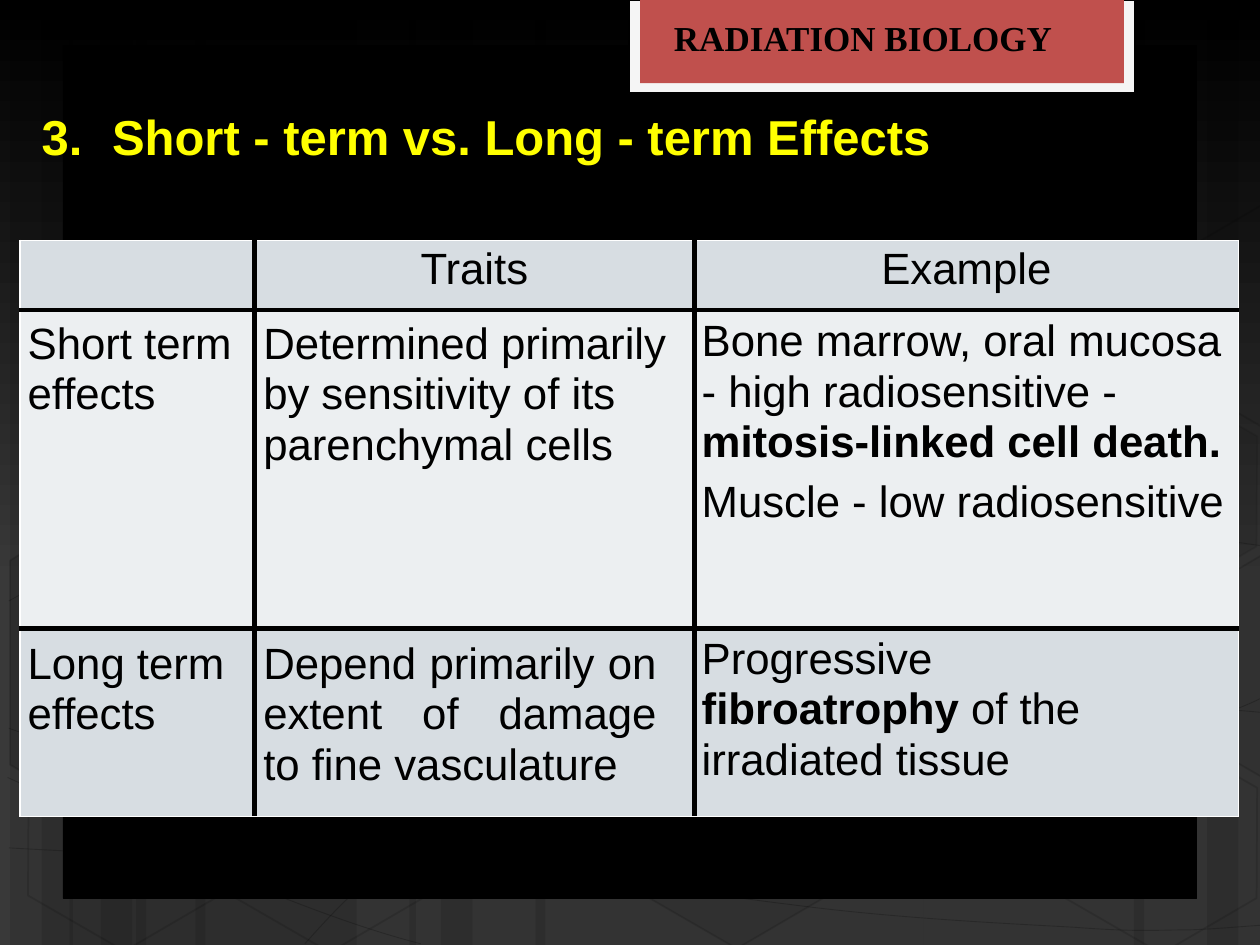
from lxml.etree import SubElement
from pptx import Presentation
from pptx.dml.color import RGBColor
from pptx.enum.shapes import MSO_SHAPE as Preset
from pptx.enum.text import MSO_ANCHOR as Anchor, MSO_AUTO_SIZE as AutoSize, PP_ALIGN as Align
from pptx.oxml.ns import qn
from pptx.util import Emu, Pt

SCALE = 9144  # 100 px to the inch
COLORS = {
    "black": "000000", "gray": "393939", "white": "FFFFFF", "frame": "F5F5F5",
    "red": "C0504D", "yellow": "FFFF00", "dark_row": "D7DDE2", "light_row": "ECEFF1",
}

STRIPES = [  # left, width
    (108, 175), (8, 50), (33, 83), (155, 175), (55, 50), (80, 83),
    (733, 175), (958, 42), (900, 83), (425, 308), (325, 50), (350, 83),
]
HEXAGONS = [  # left, top, fill opacity, line opacity
    (497, 589, 6, 12), (11, 591, 0, 12), (14, 312, 7, 8),
    (174, 592, 0, 12), (834, 593, 0, 12), (834, 314, 7, 8),
]
CUT_HEXAGONS = [  # points, fill opacity
    ([(8, 445), (19, 438), (96, 482), (95, 570), (20, 614), (8, 607)], 10),
    ([(926, 485), (1001, 441), (1009, 446), (1009, 613), (1002, 617), (926, 573)], 4),
    ([(926, 207), (1001, 163), (1010, 168), (1009, 335), (1002, 339), (926, 295)], 0),
]
CURVES = [  # start point, then two controls and an end for each Bézier piece
    [(7, 673), (61, 676), (115, 679), (190, 678), (265, 677), (358, 675), (458, 665),
     (558, 655), (700, 636), (792, 617), (883, 598), (977, 568), (1007, 551)],
    [(7, 477), (36, 461), (65, 446), (121, 431), (178, 416), (259, 394), (347, 387),
     (436, 380), (544, 379), (654, 387), (764, 395), (947, 426), (1007, 434)],
    [(6, 617), (127, 672), (247, 727), (334, 749)],
    [(7, 578), (38, 589), (70, 600), (128, 616), (186, 631), (273, 656), (357, 673),
     (440, 690), (545, 708), (628, 718), (711, 729), (800, 733), (853, 736),
     (905, 740), (919, 738), (945, 738), (971, 737), (989, 735), (1007, 734)],
    [(242, 749), (260, 729), (278, 709), (302, 691), (326, 673), (360, 653), (388, 639),
     (416, 625), (433, 619), (470, 609), (506, 599), (573, 585), (608, 578),
     (644, 571), (649, 571), (680, 569), (711, 566), (760, 563), (794, 562),
     (829, 561), (886, 562), (886, 562), (908, 562), (931, 562), (953, 562),
     (971, 563), (988, 564), (1006, 566)],
]

# Each cell holds paragraphs; the parts of a paragraph alternate plain and bold.
HEADER = [[], [("Traits",)], [("Example",)]]
SHORT_TERM = [
    [("Short term effects",)],
    [("Determined primarily by sensitivity of its parenchymal cells",)],
    [("Bone marrow, oral mucosa",), ("- high radiosensitive -",),
     ("", "mitosis-linked cell death."), ("Muscle - low radiosensitive",)],
]
LONG_TERM = [
    [("Long term effects",)],
    [("Depend primarily on extent of damage\vto fine vasculature",)],
    [("Progressive ", "fibroatrophy", " of the irradiated tissue")],
]
ROWS = [  # height, fill, top margin of each cell, cells
    (55, "dark_row", (2, 2, 2), HEADER),
    (253, "light_row", (6, 6, 4), SHORT_TERM),
    (149, "dark_row", (7, 7, 3), LONG_TERM),
]
COLUMNS = [186, 349, 432]


def px(value):
    return Emu(round(value * SCALE))


def rgb(name):
    return RGBColor.from_string(COLORS[name])


def set_opacity(properties, percent):
    color = next(properties.iter(qn("a:srgbClr")))
    SubElement(color, qn("a:alpha")).set("val", str(percent * 1000))


def paint(shape, fill=None, opacity=100, line_width=0, line_opacity=100):
    """Fill the shape and give it a black outline; zero means none."""
    shape.shadow.inherit = False
    if fill and opacity:
        shape.fill.solid()
        shape.fill.fore_color.rgb = rgb(fill)
        set_opacity(shape.element.spPr.find(qn("a:solidFill")), opacity)
    else:
        shape.fill.background()
    if line_width:
        shape.line.width = Pt(line_width)
        shape.line.color.rgb = rgb("black")
        set_opacity(shape.element.spPr.find(qn("a:ln")), line_opacity)
    else:
        shape.line.fill.background()


def add_preset(slide, preset, left, top, width, height):
    return slide.shapes.add_shape(preset, px(left), px(top), px(width), px(height))


def add_outline(slide, points, close):
    builder = slide.shapes.build_freeform(*points[0], scale=SCALE)
    builder.add_line_segments(points[1:], close=close)
    return builder.convert_to_shape()


def add_curve(slide, points):
    """Join the ends of the pieces, then bend each segment by its two controls."""
    ends = points[::3]
    curve = add_outline(slide, ends, False)
    left, top = (min(axis) for axis in zip(*ends))
    segments = list(curve.element.iter(qn("a:lnTo")))
    for segment, first, second in zip(segments, points[1::3], points[2::3]):
        segment.tag = qn("a:cubicBezTo")
        for x, y in (second, first):
            control = SubElement(segment, qn("a:pt"), x=str(x - left), y=str(y - top))
            segment.insert(0, control)
    return curve


def add_backdrop(slide):
    fill = slide.background.fill
    fill.gradient()
    fill.gradient_angle = 270
    for stop, (color, position) in zip(fill.gradient_stops, [("black", 0), ("gray", 0.62)]):
        stop.color.rgb = rgb(color)
        stop.position = position
    for left, width in STRIPES:
        paint(add_preset(slide, Preset.RECTANGLE, left, 0, width, 750), "black", 10)
    for points in CURVES:
        paint(add_curve(slide, points), line_width=0.5, line_opacity=20)
    for left, top, opacity, line_opacity in HEXAGONS:
        hexagon = add_preset(slide, Preset.HEXAGON, left, top, 175, 152)
        hexagon.adjustments[0] = 0.285
        hexagon.rotation = 30
        paint(hexagon, "black", opacity, 1, line_opacity)
    for points, opacity in CUT_HEXAGONS:
        paint(add_outline(slide, points, True), "black", opacity, 1, 12)
    paint(add_preset(slide, Preset.RECTANGLE, 50, 36, 900, 677), "black", line_width=0.5)


def format_run(run, font_name, size, color, bold):
    run.font.name, run.font.size, run.font.bold = font_name, Pt(size), bold
    run.font.color.rgb = rgb(color)


def add_banner(slide, left, top, width, height):
    paint(add_preset(slide, Preset.RECTANGLE, left, top, width, height), "frame", line_width=1.25)
    paint(add_preset(slide, Preset.RECTANGLE, left + 9, top, width - 18, height - 8), "red")
    label = slide.shapes.add_textbox(px(left + 26), px(top + 8), px(358), px(44))
    label.text_frame.word_wrap = True
    label.text_frame.text = "RADIATION BIOLOGY"
    format_run(label.text_frame.paragraphs[0].runs[0], "Times New Roman", 20, "black", True)


def add_title(slide, left, top, width, height):
    title = slide.shapes.title
    slide.shapes.element.append(title.element)  # in front of the backdrop
    title.left, title.top, title.width, title.height = map(px, (left, top, width, height))
    frame = title.text_frame
    frame.auto_size, frame.vertical_anchor = AutoSize.NONE, Anchor.BOTTOM
    frame.margin_left = frame.margin_right = frame.margin_bottom = 0
    frame.margin_top = px(1)
    frame.text = "3.\tShort - term vs. Long - term Effects"
    paragraph = frame.paragraphs[0]
    paragraph.alignment = Align.LEFT
    properties = paragraph._p.get_or_add_pPr()
    properties.set("marL", str(px(1)))
    tabs = SubElement(properties, qn("a:tabLst"))
    SubElement(tabs, qn("a:tab"), pos=str(px(56)), algn="l")
    for run in paragraph.runs:
        format_run(run, "Arial", 28, "yellow", True)


def set_borders(cell, outer_sides):
    """Draw thin white lines on the outer sides and thick black ones elsewhere."""
    properties = cell._tc.get_or_add_tcPr()
    for side in "LRTB":
        width, color = (1, "white") if side in outer_sides else (3, "black")
        line = SubElement(properties, qn(f"a:ln{side}"), w=str(Pt(width)))
        solid = SubElement(line, qn("a:solidFill"))
        SubElement(solid, qn("a:srgbClr"), val=COLORS[color])


def fill_cell(cell, paragraphs, alignment):
    frame = cell.text_frame
    for index, (first, *others) in enumerate(paragraphs):
        paragraph = frame.add_paragraph() if index else frame.paragraphs[0]
        paragraph.text = first
        paragraph.alignment, paragraph.line_spacing = alignment, Pt(29)
        for run in paragraph.runs:
            format_run(run, "Arial", 25, "black", False)
        for position, text in enumerate(others):
            run = paragraph.add_run()
            run.text = text
            format_run(run, "Arial", 25, "black", position % 2 == 0)
        if index == 3:
            paragraph.space_before = Pt(5)


def add_effects_table(slide, left, top):
    height = sum(row[0] for row in ROWS)
    table = slide.shapes.add_table(len(ROWS), len(COLUMNS), px(left), px(top),
                                   px(sum(COLUMNS)), px(height)).table
    table.first_row = table.horz_banding = False
    for column, width in zip(table.columns, COLUMNS):
        column.width = px(width)
    last_row, last_column = len(ROWS) - 1, len(COLUMNS) - 1
    for r, (row_height, fill, top_margins, cells) in enumerate(ROWS):
        table.rows[r].height = px(row_height)
        for c, paragraphs in enumerate(cells):
            cell = table.cell(r, c)
            edges = {"L": c == 0, "R": c == last_column, "T": r == 0, "B": r == last_row}
            set_borders(cell, [side for side, outer in edges.items() if outer])
            cell.fill.solid()
            cell.fill.fore_color.rgb = rgb(fill)
            cell.margin_left = px((6, 7, 6)[c] if r else 0)
            cell.margin_top = px(top_margins[c])
            cell.margin_right = cell.margin_bottom = 0
            fill_cell(cell, paragraphs, Align.LEFT if r else Align.CENTER)
    damage = table.cell(2, 1)
    damage.text_frame.paragraphs[0].alignment = Align.JUSTIFY
    damage.margin_right = px(30)
    table.cell(2, 2).margin_right = px(100)


def main():
    presentation = Presentation()
    presentation.slide_width, presentation.slide_height = px(1000), px(750)
    slide = presentation.slides.add_slide(presentation.slide_layouts[5])
    add_backdrop(slide)
    add_banner(slide, 499, 0, 402, 74)
    add_title(slide, 32, 82, 707, 49)
    add_effects_table(slide, 16, 191)
    presentation.save("out.pptx")


if __name__ == "__main__":
    main()
